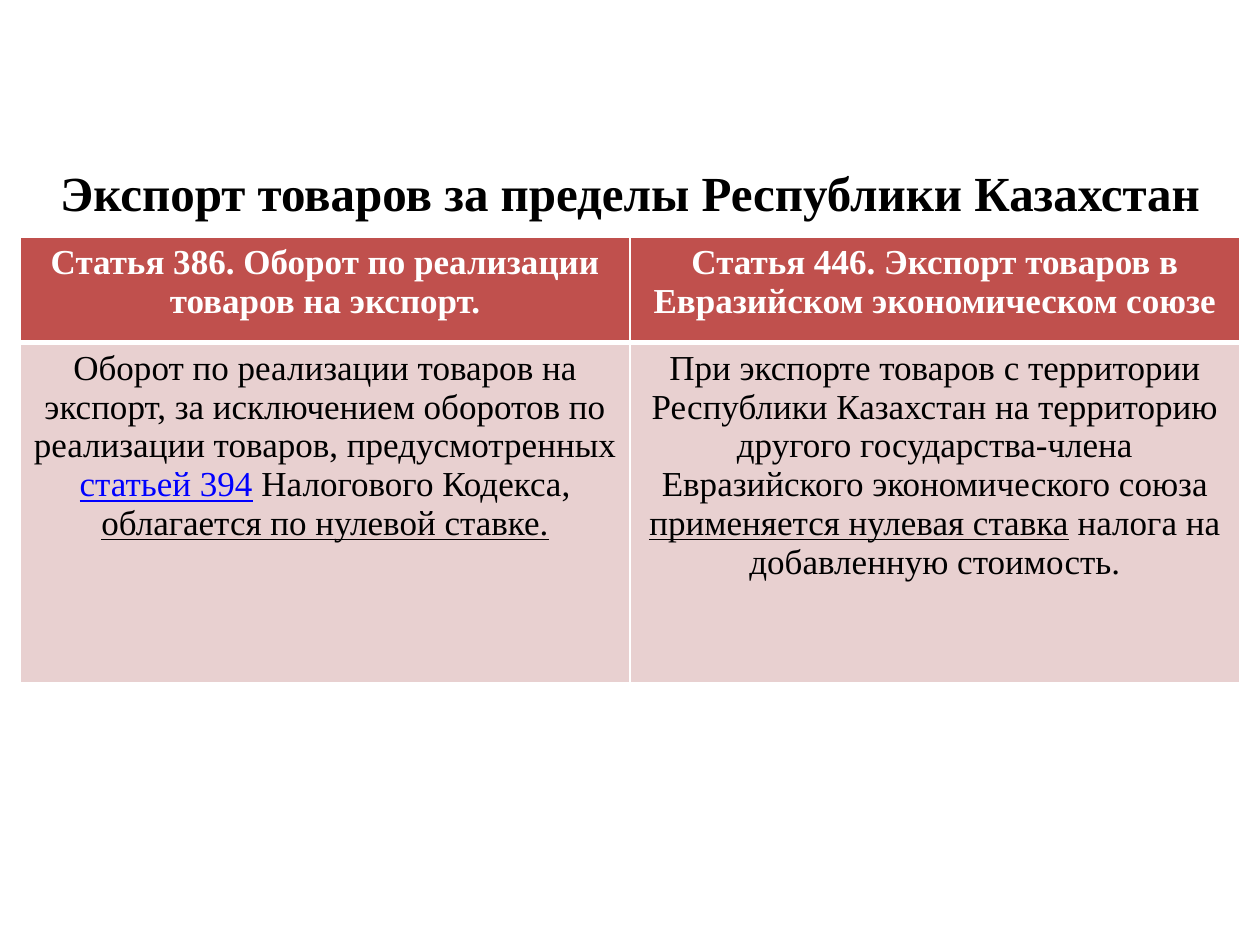
from lxml import etree
from pptx import Presentation
from pptx.dml.color import RGBColor
from pptx.enum.text import MSO_ANCHOR, PP_ALIGN
from pptx.oxml.ns import qn
from pptx.util import Inches, Pt

CENTER = PP_ALIGN.CENTER
MIDDLE = MSO_ANCHOR.MIDDLE
BLACK = RGBColor(0x00, 0x00, 0x00)
WHITE = RGBColor(0xFF, 0xFF, 0xFF)
BLUE = RGBColor(0x00, 0x00, 0xFF)
RED = RGBColor(0xC0, 0x50, 0x4D)
PINK = RGBColor(0xE8, 0xD0, 0xD0)
FONT = "Times New Roman"


def add_run(paragraph, text, size, color, bold=False, underline=False):
    run = paragraph.add_run()
    run.text = text
    run.font.name = FONT
    run.font.size = Pt(size)
    run.font.color.rgb = color
    run.font.bold = bold
    run.font.underline = underline


def add_border(cell, side, width):
    line = etree.SubElement(cell._tc.get_or_add_tcPr(), qn(f"a:ln{side}"), w=str(Pt(width)))
    fill = etree.SubElement(line, qn("a:solidFill"))
    etree.SubElement(fill, qn("a:srgbClr"), val=str(WHITE))


prs = Presentation()
prs.slide_width = Inches(10)
prs.slide_height = Inches(7.5)
slide = prs.slides.add_slide(prs.slide_layouts[6])

title = slide.shapes.add_textbox(Inches(0), Inches(1.09), Inches(10), Inches(0.86))
title.text_frame.word_wrap = True
title.text_frame.vertical_anchor = MIDDLE
heading = title.text_frame.paragraphs[0]
heading.alignment = CENTER
add_run(heading, "Экспорт товаров за пределы Республики Казахстан", 28, BLACK, bold=True)

articles = [
    [
        [("Статья 386. Оборот по реализации товаров на экспорт.", WHITE, False)],
        [("Статья 446. Экспорт товаров в Евразийском экономическом союзе", WHITE, False)],
    ],
    [
        [
            ("Оборот по реализации товаров на экспорт, за исключением оборотов "
             "по реализации товаров, предусмотренных ", BLACK, False),
            ("статьей 394", BLUE, True),
            (" Налогового Кодекса, ", BLACK, False),
            ("облагается по нулевой ставке.", BLACK, True),
        ],
        [
            ("При экспорте товаров с территории Республики Казахстан на территорию "
             "другого государства-члена Евразийского экономического союза ", BLACK, False),
            ("применяется нулевая ставка", BLACK, True),
            (" налога на добавленную стоимость.", BLACK, False),
        ],
    ],
]
row_styles = [(0.84, RED, True, 3), (2.7, PINK, False, 1)]

table = slide.shapes.add_table(
    2, 2, Inches(0.16), Inches(1.88), Inches(9.68), Inches(3.54)
).table
for column in table.columns:
    column.width = Inches(4.84)

for row_index, (height, fill_color, bold, bottom_width) in enumerate(row_styles):
    table.rows[row_index].height = Inches(height)
    top_width = 3 if row_index else 1
    for column_index, passages in enumerate(articles[row_index]):
        cell = table.cell(row_index, column_index)
        for side, width in (("L", 1), ("R", 1), ("T", top_width), ("B", bottom_width)):
            add_border(cell, side, width)
        cell.fill.solid()
        cell.fill.fore_color.rgb = fill_color
        paragraph = cell.text_frame.paragraphs[0]
        paragraph.alignment = CENTER
        for text, color, underline in passages:
            add_run(paragraph, text, 20, color, bold, underline)

prs.save("out.pptx")
